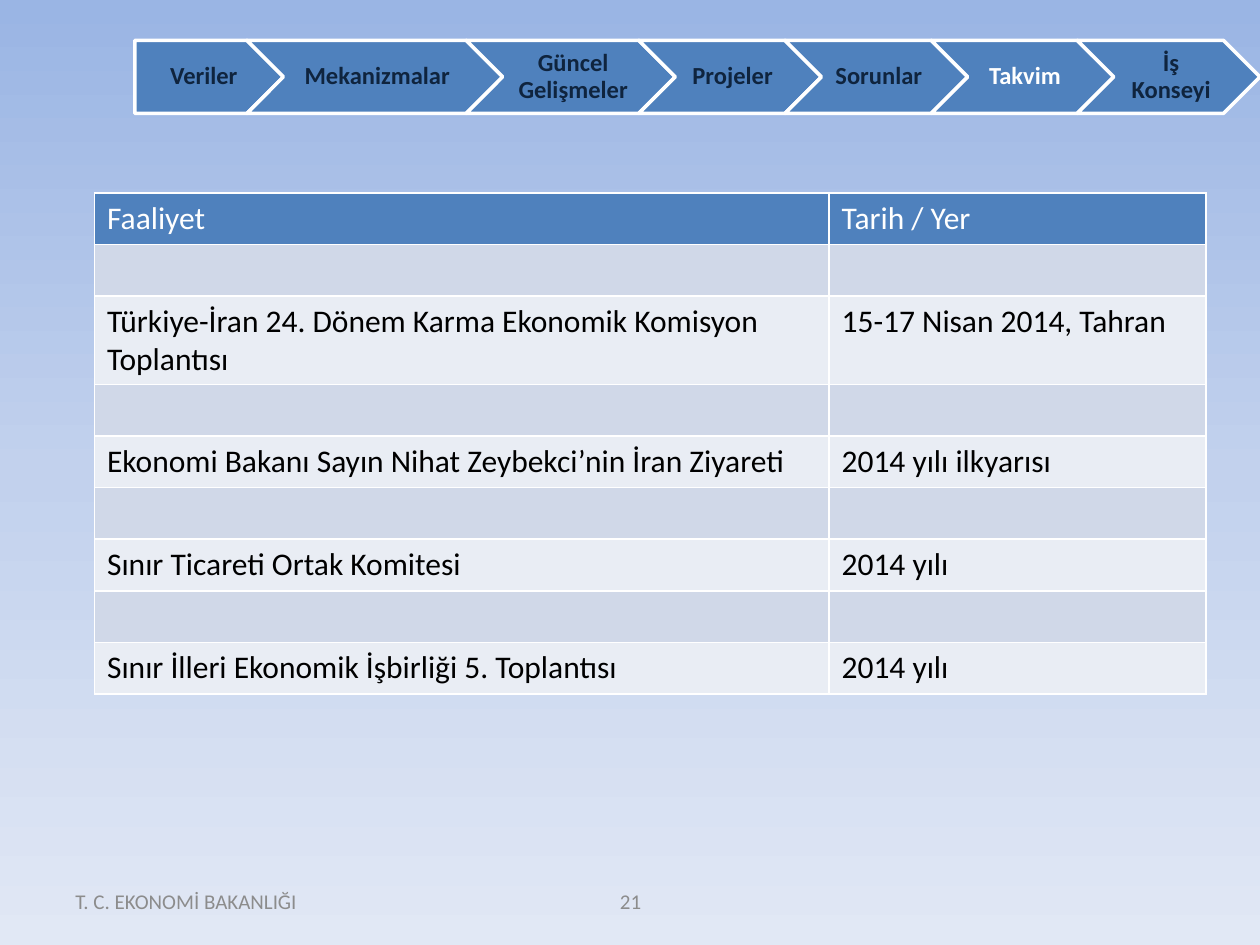
from copy import deepcopy
from dataclasses import dataclass

from lxml import etree
from pptx import Presentation
from pptx.dml.color import RGBColor
from pptx.enum.shapes import MSO_SHAPE
from pptx.enum.text import MSO_ANCHOR, PP_ALIGN
from pptx.oxml.ns import qn
from pptx.util import Inches, Pt

PENTAGON, CHEVRON = MSO_SHAPE.PENTAGON, MSO_SHAPE.CHEVRON
MIDDLE = MSO_ANCHOR.MIDDLE
LEFT, CENTER = PP_ALIGN.LEFT, PP_ALIGN.CENTER


@dataclass(frozen=True)
class Theme:
    font: str = "Calibri"
    blue: str = "4F81BD"
    navy: str = "0F243E"
    white: str = "FFFFFF"
    black: str = "000000"
    grey: str = "8C8C8C"
    band_dark: str = "D0D8E8"
    band_light: str = "E9EDF4"
    background: tuple = ("9AB5E4", "C2D1ED", "E1E8F5")
    table_size: int = 18
    step_size: int = 14
    footer_size: int = 12


THEME = Theme()

# Step label and width in inches
STEPS = [
    ("Veriler", 1.18),
    ("Mekanizmalar", 2.03),
    ("Güncel Gelişmeler", 1.66),
    ("Projeler", 1.45),
    ("Sorunlar", 1.45),
    ("Takvim", 1.45),
    ("İş Konseyi", 1.45),
]
CURRENT_STEP = "Takvim"
STEP_HEIGHT = 0.58
STEP_OVERLAP = STEP_HEIGHT / 2

HEADER = ("Faaliyet", "Tarih / Yer")
EVENTS = [
    ("Türkiye-İran 24. Dönem Karma Ekonomik Komisyon Toplantısı", "15-17 Nisan 2014, Tahran"),
    ("Ekonomi Bakanı Sayın Nihat Zeybekci’nin İran Ziyareti", "2014 yılı ilkyarısı"),
    ("Sınır Ticareti Ortak Komitesi", "2014 yılı"),
    ("Sınır İlleri Ekonomik İşbirliği 5. Toplantısı", "2014 yılı"),
]
COLUMN_WIDTHS = (5.83, 2.99)
ROW_HEIGHT = 0.41


def color(value):
    return RGBColor.from_string(value)


def add_run(paragraph, text, size, font_color, bold=False):
    run = paragraph.add_run()
    run.text = text
    run.font.name = THEME.font
    run.font.size = Pt(size)
    run.font.bold = bold
    run.font.color.rgb = color(font_color)


def set_background(slide):
    fill = slide.background.fill
    fill.gradient()
    fill.gradient_angle = 270
    first_stop = slide.element.xpath(".//a:gsLst/a:gs")[0]
    middle_stop = deepcopy(first_stop)
    middle_stop.set("pos", "50000")
    first_stop.addnext(middle_stop)
    for stop, value in zip(fill.gradient_stops, THEME.background):
        stop.color.rgb = color(value)


def add_step(slide, preset, left, width, label):
    shape = slide.shapes.add_shape(
        preset, Inches(left), Inches(0.32), Inches(width), Inches(STEP_HEIGHT))
    shape.shadow.inherit = False
    shape.fill.solid()
    shape.fill.fore_color.rgb = color(THEME.blue)
    shape.line.color.rgb = color(THEME.white)
    shape.line.width = Pt(2)
    frame = shape.text_frame
    frame.word_wrap = True
    frame.vertical_anchor = MIDDLE
    frame.margin_left = Inches(0.08 if preset == PENTAGON else 0.06)
    frame.margin_right = Inches(0.02)
    frame.margin_top = frame.margin_bottom = Inches(0.04)
    paragraph = frame.paragraphs[0]
    paragraph.alignment = CENTER
    paragraph.line_spacing = 0.9
    label_color = THEME.white if label == CURRENT_STEP else THEME.navy
    add_run(paragraph, label, THEME.step_size, label_color, bold=True)


def add_steps(slide):
    left = 1.07
    for index, (label, width) in enumerate(STEPS):
        add_step(slide, CHEVRON if index else PENTAGON, left, width, label)
        left += width - STEP_OVERLAP


def set_borders(cell):
    properties = cell._tc.get_or_add_tcPr()
    for side in ("lnL", "lnR", "lnT", "lnB"):
        line = etree.SubElement(properties, qn(f"a:{side}"), w=str(Pt(1)))
        solid = etree.SubElement(line, qn("a:solidFill"))
        etree.SubElement(solid, qn("a:srgbClr"), val=THEME.white)


def fill_row(table, row_index, texts, fill_color, font_color):
    for cell, text in zip(table.rows[row_index].cells, texts):
        set_borders(cell)
        cell.fill.solid()
        cell.fill.fore_color.rgb = color(fill_color)
        if text:
            add_run(cell.text_frame.paragraphs[0], text, THEME.table_size, font_color)


def add_calendar(slide):
    row_count = 1 + 2 * len(EVENTS)
    table = slide.shapes.add_table(
        row_count, len(COLUMN_WIDTHS), Inches(0.75), Inches(1.53),
        Inches(sum(COLUMN_WIDTHS)), Inches(ROW_HEIGHT * row_count)).table
    for column, width in zip(table.columns, COLUMN_WIDTHS):
        column.width = Inches(width)
    for row in table.rows:
        row.height = Inches(ROW_HEIGHT)
    fill_row(table, 0, HEADER, THEME.blue, THEME.white)
    # Each event follows an empty spacer row
    for index, event in enumerate(EVENTS):
        spacer_row = 1 + 2 * index
        fill_row(table, spacer_row, ("", ""), THEME.band_dark, THEME.black)
        fill_row(table, spacer_row + 1, event, THEME.band_light, THEME.black)


def add_footer(slide, left, width, text, alignment):
    box = slide.shapes.add_textbox(Inches(left), Inches(6.95), Inches(width), Inches(0.4))
    frame = box.text_frame
    frame.word_wrap = True
    frame.vertical_anchor = MIDDLE
    paragraph = frame.paragraphs[0]
    paragraph.alignment = alignment
    add_run(paragraph, text, THEME.footer_size, THEME.grey)


def main():
    presentation = Presentation()
    presentation.slide_width = Inches(10)
    presentation.slide_height = Inches(7.5)
    slide = presentation.slides.add_slide(presentation.slide_layouts[6])
    set_background(slide)

    # Footer and page number
    add_footer(slide, 0.5, 2.33, "T. C. EKONOMİ BAKANLIĞI", LEFT)
    add_footer(slide, 3.42, 3.17, "21", CENTER)

    # Event calendar and navigation steps
    add_calendar(slide)
    add_steps(slide)

    presentation.save("out.pptx")


if __name__ == "__main__":
    main()
